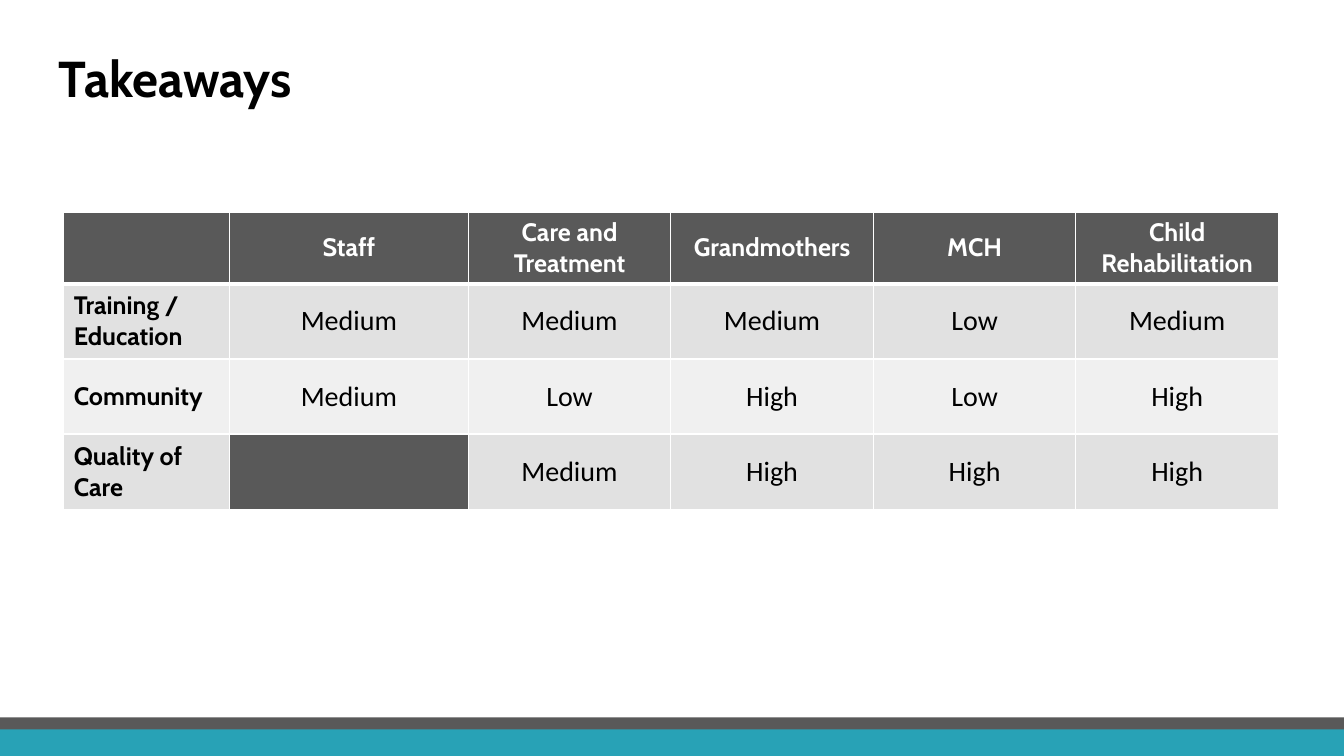
import pptx
import pptx.util
import pptx.dml.color
import pptx.enum.shapes
import pptx.enum.text
import pptx.oxml
import pptx.oxml.ns
from lxml import etree

Pt = pptx.util.Pt
RGBColor = pptx.dml.color.RGBColor
PP_ALIGN = pptx.enum.text.PP_ALIGN
MSO_ANCHOR = pptx.enum.text.MSO_ANCHOR

# Content
TITLE = "Takeaways"
RATINGS = [
    ("", "Staff", "Care and Treatment", "Grandmothers", "MCH", "Child Rehabilitation"),
    ("Training / Education", "Medium", "Medium", "Medium", "Low", "Medium"),
    ("Community", "Medium", "Low", "High", "Low", "High"),
    ("Quality of Care", "", "Medium", "High", "High", "High"),
]

# Style
BLACK = RGBColor(0x00, 0x00, 0x00)
WHITE = RGBColor(0xFF, 0xFF, 0xFF)
TEAL = RGBColor(0x28, 0xA2, 0xB6)
DARK_GRAY = RGBColor(0x59, 0x59, 0x59)
MID_GRAY = RGBColor(0xE1, 0xE1, 0xE1)
LIGHT_GRAY = RGBColor(0xF0, 0xF0, 0xF0)
HEADING_FONT = "Cabin"
BODY_FONT = "Calibri"

# Layout in points
SLIDE_WIDTH, SLIDE_HEIGHT = 960, 540
FOOTER_BANDS = [(517.7, 22.3, TEAL), (512.5, 8.5, DARK_GRAY)]
TABLE_LEFT, TABLE_TOP = 45.5, 151.5
COLUMN_WIDTHS = [118.5, 170.5] + [144.7] * 4
ROW_HEIGHTS = [51] + [53.7] * 3


def style_runs(paragraph, font_name, size, color, bold):
    for run in paragraph.runs:
        run.font.name = font_name
        run.font.size = Pt(size)
        run.font.color.rgb = color
        run.font.bold = bold


def set_borders(cell, top_width, bottom_width):
    properties = cell._tc.get_or_add_tcPr()
    widths = {"lnL": 1, "lnR": 1, "lnT": top_width, "lnB": bottom_width}
    # Border lines must come before the cell's fill
    for position, (tag, width) in enumerate(widths.items()):
        line = etree.Element(pptx.oxml.ns.qn("a:" + tag), w=str(int(Pt(width))))
        fill = etree.SubElement(line, pptx.oxml.ns.qn("a:solidFill"))
        etree.SubElement(fill, pptx.oxml.ns.qn("a:srgbClr"), val=str(WHITE))
        properties.insert(position, line)


def add_footer(slide):
    for top, height, color in FOOTER_BANDS:
        band = slide.shapes.add_shape(
            pptx.enum.shapes.MSO_SHAPE.RECTANGLE,
            0, Pt(top), Pt(SLIDE_WIDTH), Pt(height))
        band.shadow.inherit = False
        band.fill.solid()
        band.fill.fore_color.rgb = color
        band.line.fill.background()


def add_title(slide):
    title = slide.shapes.title
    title.left, title.top, title.width, title.height = Pt(34.9), Pt(5.6), Pt(828), Pt(104.4)
    title.text_frame.text = TITLE
    title.text_frame.vertical_anchor = MSO_ANCHOR.MIDDLE
    paragraph = title.text_frame.paragraphs[0]
    paragraph.alignment = PP_ALIGN.LEFT
    paragraph.line_spacing = 0.9
    style_runs(paragraph, HEADING_FONT, 36, BLACK, True)


def add_ratings_table(slide):
    table = slide.shapes.add_table(
        len(RATINGS), len(COLUMN_WIDTHS), Pt(TABLE_LEFT), Pt(TABLE_TOP),
        Pt(sum(COLUMN_WIDTHS)), Pt(sum(ROW_HEIGHTS))).table
    for column, width in zip(table.columns, COLUMN_WIDTHS):
        column.width = Pt(width)
    for row, height in zip(table.rows, ROW_HEIGHTS):
        row.height = Pt(height)

    for row_index, row_texts in enumerate(RATINGS):
        is_header = row_index == 0
        for column_index, text in enumerate(row_texts):
            is_label = column_index == 0
            cell = table.cell(row_index, column_index)
            cell.text_frame.text = text
            cell.vertical_anchor = MSO_ANCHOR.MIDDLE
            paragraph = cell.text_frame.paragraphs[0]
            paragraph.alignment = PP_ALIGN.LEFT if is_label else PP_ALIGN.CENTER
            if is_header or is_label:
                style_runs(paragraph, HEADING_FONT, 18, WHITE if is_header else BLACK, True)
            else:
                style_runs(paragraph, BODY_FONT, 20, BLACK, False)

            # Header and empty cells are dark, the other rows alternate
            cell.fill.solid()
            if is_header or not text:
                cell.fill.fore_color.rgb = DARK_GRAY
            else:
                cell.fill.fore_color.rgb = MID_GRAY if row_index % 2 else LIGHT_GRAY
            set_borders(cell, 3 if row_index == 1 else 1, 3 if is_header else 1)


def main():
    presentation = pptx.Presentation()
    presentation.slide_width = Pt(SLIDE_WIDTH)
    presentation.slide_height = Pt(SLIDE_HEIGHT)
    slide = presentation.slides.add_slide(presentation.slide_layouts[5])
    add_footer(slide)
    add_title(slide)
    add_ratings_table(slide)
    presentation.save("out.pptx")


if __name__ == "__main__":
    main()
